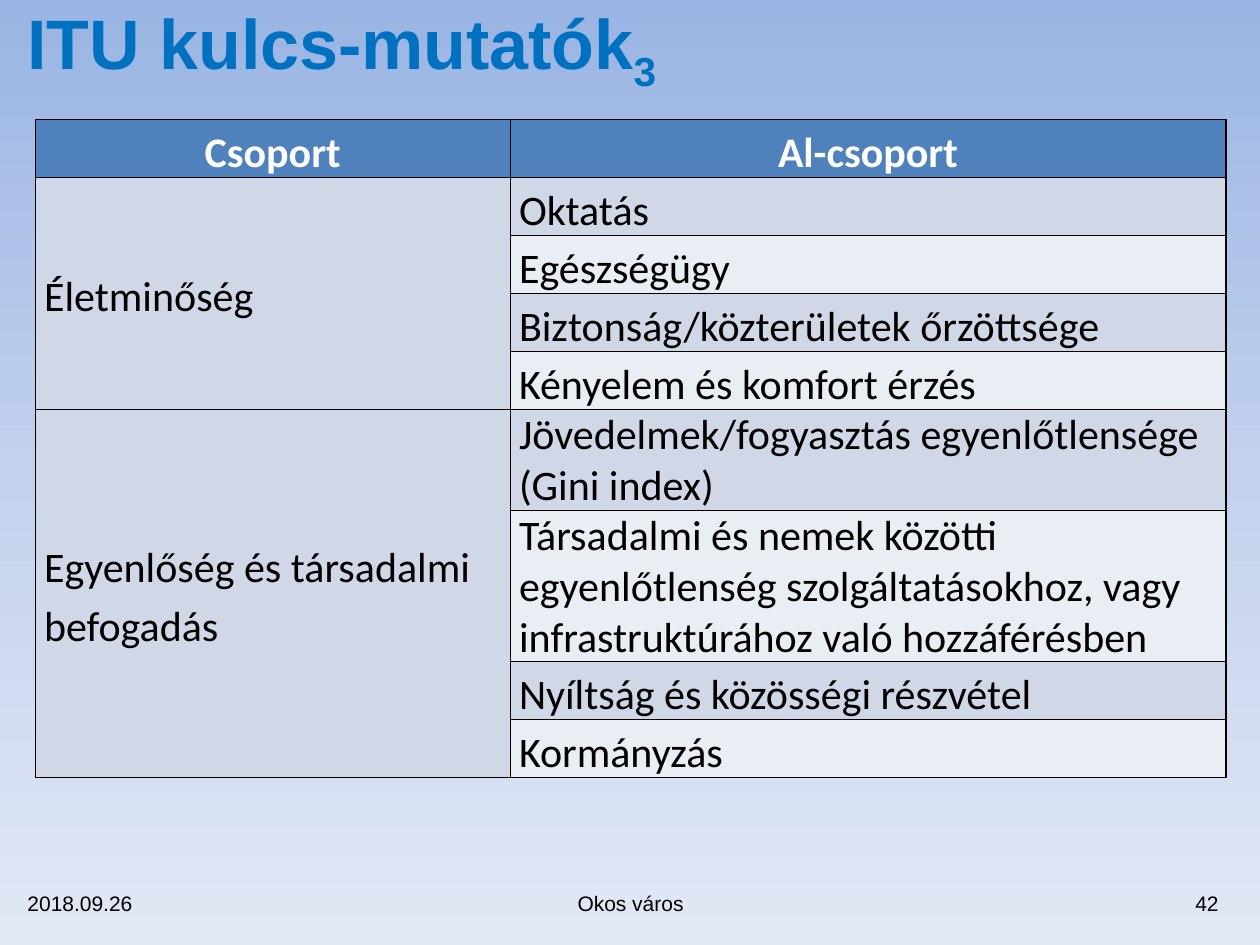
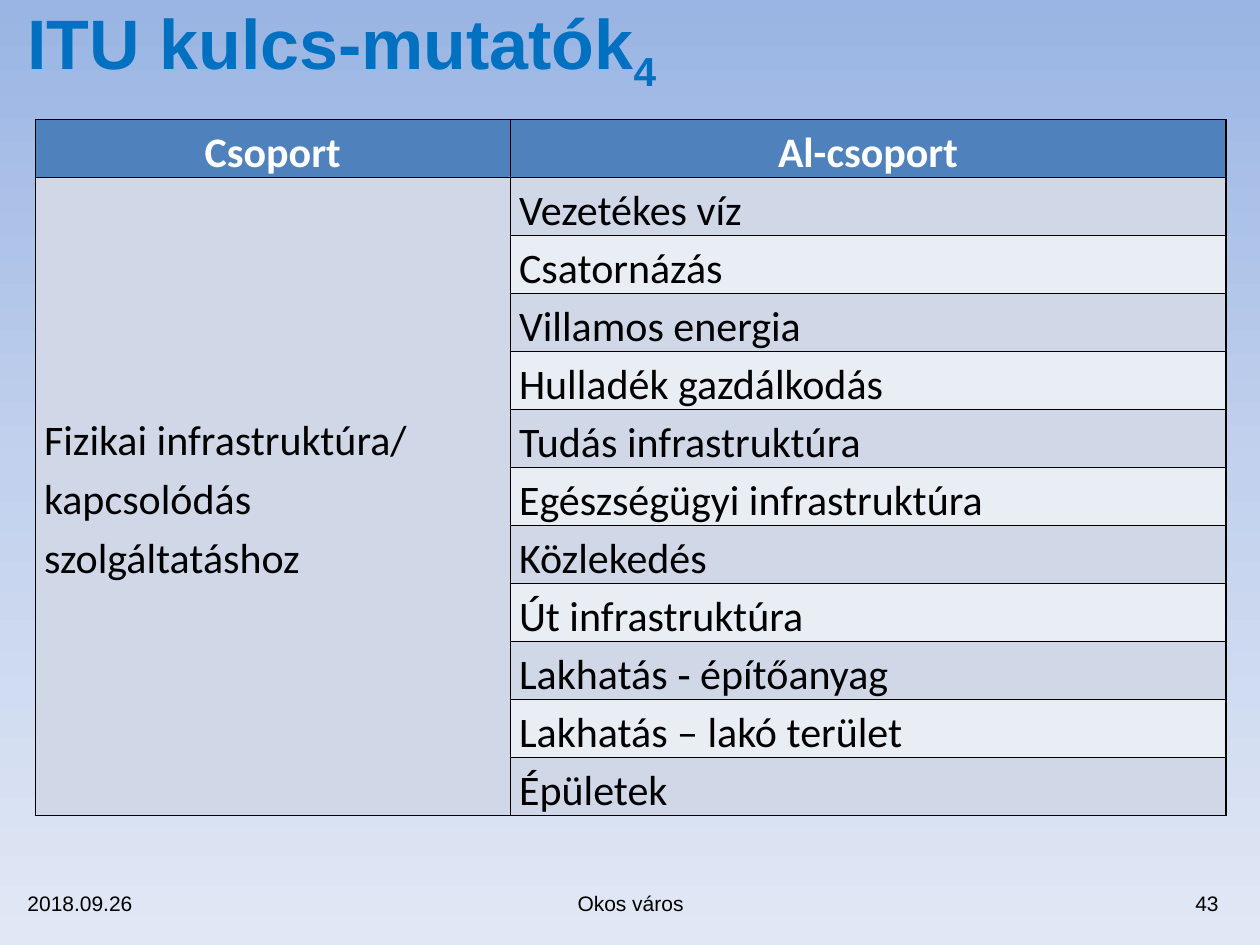
from copy import deepcopy

from lxml import etree
from pptx import Presentation
from pptx.dml.color import RGBColor
from pptx.enum.text import MSO_ANCHOR, PP_ALIGN
from pptx.oxml.ns import qn
from pptx.util import Inches, Pt

LEFT, CENTER, RIGHT = PP_ALIGN.LEFT, PP_ALIGN.CENTER, PP_ALIGN.RIGHT
JUSTIFY = PP_ALIGN.JUSTIFY
TOP, MIDDLE = MSO_ANCHOR.TOP, MSO_ANCHOR.MIDDLE

BLACK, WHITE = "000000", "FFFFFF"
TITLE_BLUE, HEADER_BLUE = "0070C0", "4F81BD"
BANDS = ("D0D8E8", "E9EDF4")
BACKDROP = ((0, "9AB5E4"), (0.5, "C2D1ED"), (1, "E1E8F5"))

TITLE_BOX = (0.12, 0.08, 9.76, 0.59)
TABLE_BOX = (0.28, 0.95, 9.45)
FOOTER_BOX = (0.12, 6.97, 9.65, 0.39)
GROUP_WIDTH = 3.77
ROW_HEIGHT = 0.41
LONGEST_LINE = 40

HEADINGS = ("Csoport", "Al-csoport")
SLIDES = [
    ("3", "42", {
        "Életminőség": [
            "Oktatás",
            "Egészségügy",
            "Biztonság/közterületek őrzöttsége",
            "Kényelem és komfort érzés",
        ],
        "Egyenlőség és társadalmi befogadás": [
            "Jövedelmek/fogyasztás egyenlőtlensége (Gini index)",
            "Társadalmi és nemek közötti egyenlőtlenség szolgáltatásokhoz, "
            "vagy infrastruktúrához való hozzáférésben",
            "Nyíltság és közösségi részvétel",
            "Kormányzás",
        ],
    }),
    ("4", "43", {
        "Fizikai infrastruktúra/ kapcsolódás szolgáltatáshoz": [
            "Vezetékes víz",
            "Csatornázás",
            "Villamos energia",
            "Hulladék gazdálkodás",
            "Tudás infrastruktúra",
            "Egészségügyi infrastruktúra",
            "Közlekedés",
            "Út infrastruktúra",
            "Lakhatás ‑ építőanyag",
            "Lakhatás – lakó terület",
            "Épületek",
        ],
    }),
]


def rgb(value):
    return RGBColor.from_string(value)


def write(frame, text, size=12, font="Arial", color=BLACK, bold=False,
          align=LEFT, spacing=None, subscript=""):
    frame.word_wrap = True
    paragraph = frame.paragraphs[0]
    paragraph.alignment = align
    paragraph.line_spacing = spacing
    for part in filter(None, (text, subscript)):
        run = paragraph.add_run()
        run.text = part
        run.font.size = Pt(size)
        run.font.name = font
        run.font.bold = bold
        run.font.color.rgb = rgb(color)
    if subscript:
        run.font._element.set("baseline", "-25000")


def add_text(slide, box, text, **style):
    frame = slide.shapes.add_textbox(*map(Inches, box)).text_frame
    frame.vertical_anchor = MIDDLE
    write(frame, text, **style)


def paint_background(slide):
    fill = slide.background.fill
    fill.gradient()
    fill.gradient_angle = 270
    stops = slide.element.find(".//" + qn("a:gsLst"))
    stops.insert(1, deepcopy(stops[0]))
    for stop, (position, color) in zip(fill.gradient_stops, BACKDROP):
        stop.position = position
        stop.color.rgb = rgb(color)


def add_footer(slide, box, number):
    left, top, width, height = box
    side, middle = 1.97, 3.15
    add_text(slide, (left, top, side, height), "2018.09.26")
    add_text(slide, (left + (width - middle) / 2 + 0.06, top, middle, height),
             "Okos város", align=CENTER)
    add_text(slide, (left + width - side, top, side, height), number, align=RIGHT)


def add_borders(cell):
    properties = cell._tc.get_or_add_tcPr()
    for index, edge in enumerate(("a:lnL", "a:lnR", "a:lnT", "a:lnB")):
        line = etree.Element(qn(edge), w=str(Pt(1)))
        fill = etree.SubElement(line, qn("a:solidFill"))
        etree.SubElement(fill, qn("a:srgbClr"), val=BLACK)
        properties.insert(index, line)


def style_cell(cell, fill, anchor=TOP):
    cell.fill.solid()
    cell.fill.fore_color.rgb = rgb(fill)
    cell.margin_left = cell.margin_right = Inches(0.07)
    cell.margin_top = cell.margin_bottom = 0
    cell.vertical_anchor = anchor
    add_borders(cell)


def fill_cell(cell, text, spacing=1.15, **style):
    write(cell.text_frame, text, size=24, font="Calibri", spacing=spacing, **style)


def add_indicator_table(slide, box, groups):
    left, top, width = box
    row_count = 1 + sum(map(len, groups.values()))
    table = slide.shapes.add_table(
        row_count, 2, Inches(left), Inches(top), Inches(width),
        Inches(ROW_HEIGHT * row_count)).table
    table.columns[0].width = Inches(GROUP_WIDTH)
    table.columns[1].width = Inches(width - GROUP_WIDTH)
    for row in table.rows:
        row.height = Inches(ROW_HEIGHT)

    for column, heading in enumerate(HEADINGS):
        cell = table.cell(0, column)
        style_cell(cell, HEADER_BLUE)
        fill_cell(cell, heading, color=WHITE, bold=True, align=CENTER)

    first = 1
    for group, subgroups in groups.items():
        for row, subgroup in enumerate(subgroups, first):
            style_cell(table.cell(row, 0), BANDS[0], MIDDLE)
            cell = table.cell(row, 1)
            style_cell(cell, BANDS[(row - 1) % 2])
            wraps = len(subgroup) > LONGEST_LINE
            fill_cell(cell, subgroup, spacing=1.0 if wraps else 1.15,
                      align=LEFT if wraps else JUSTIFY)
        group_cell = table.cell(first, 0)
        group_cell.merge(table.cell(row, 0))
        fill_cell(group_cell, group)
        first = row + 1


def add_indicator_slide(deck, part, number, groups):
    slide = deck.slides.add_slide(deck.slide_layouts[6])
    paint_background(slide)
    add_text(slide, TITLE_BOX, "ITU kulcs-mutatók", subscript=part,
             size=40, color=TITLE_BLUE, bold=True)
    add_indicator_table(slide, TABLE_BOX, groups)
    add_footer(slide, FOOTER_BOX, number)


def main():
    deck = Presentation()
    deck.slide_width, deck.slide_height = Inches(10), Inches(7.5)
    for part, number, groups in SLIDES:
        add_indicator_slide(deck, part, number, groups)
    deck.save("out.pptx")


if __name__ == "__main__":
    main()
